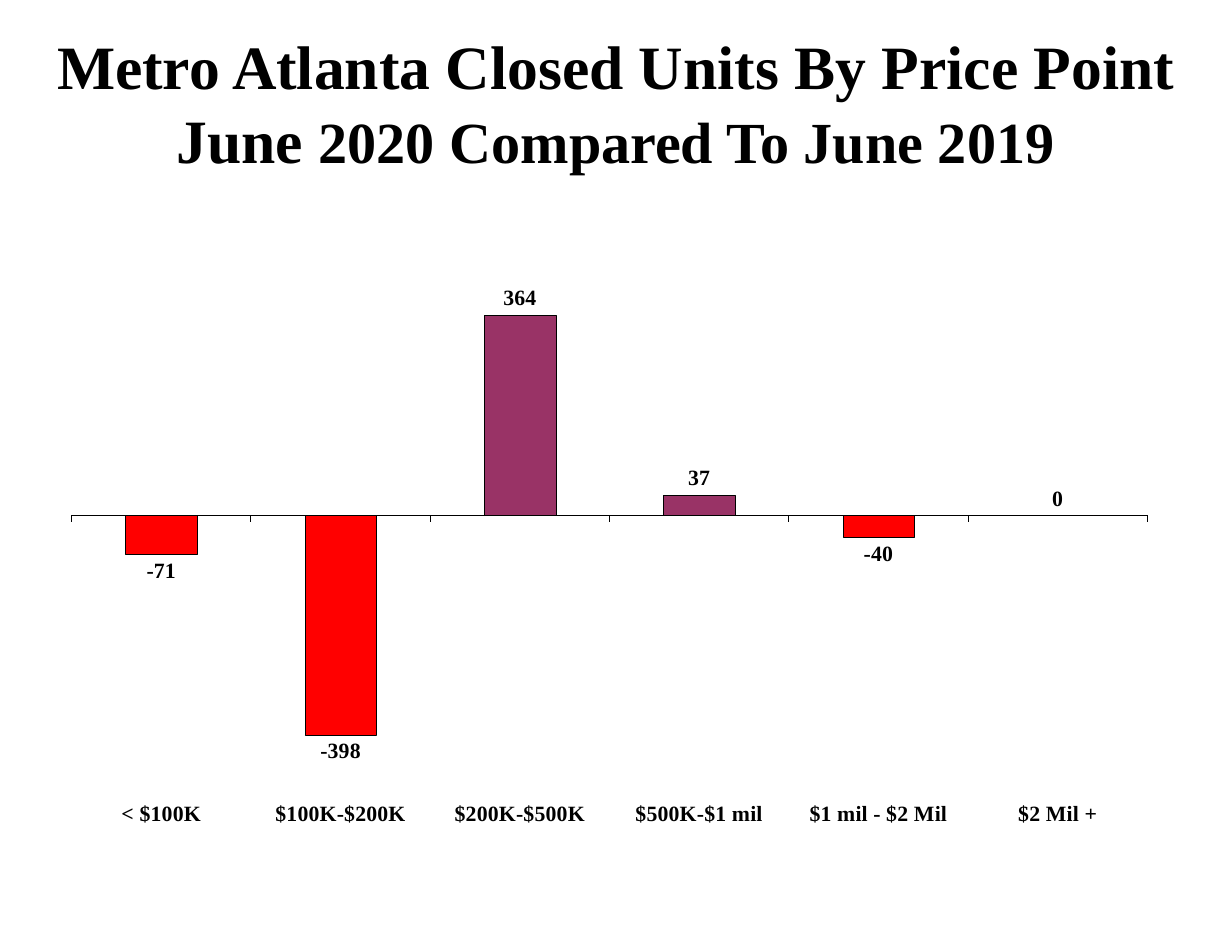
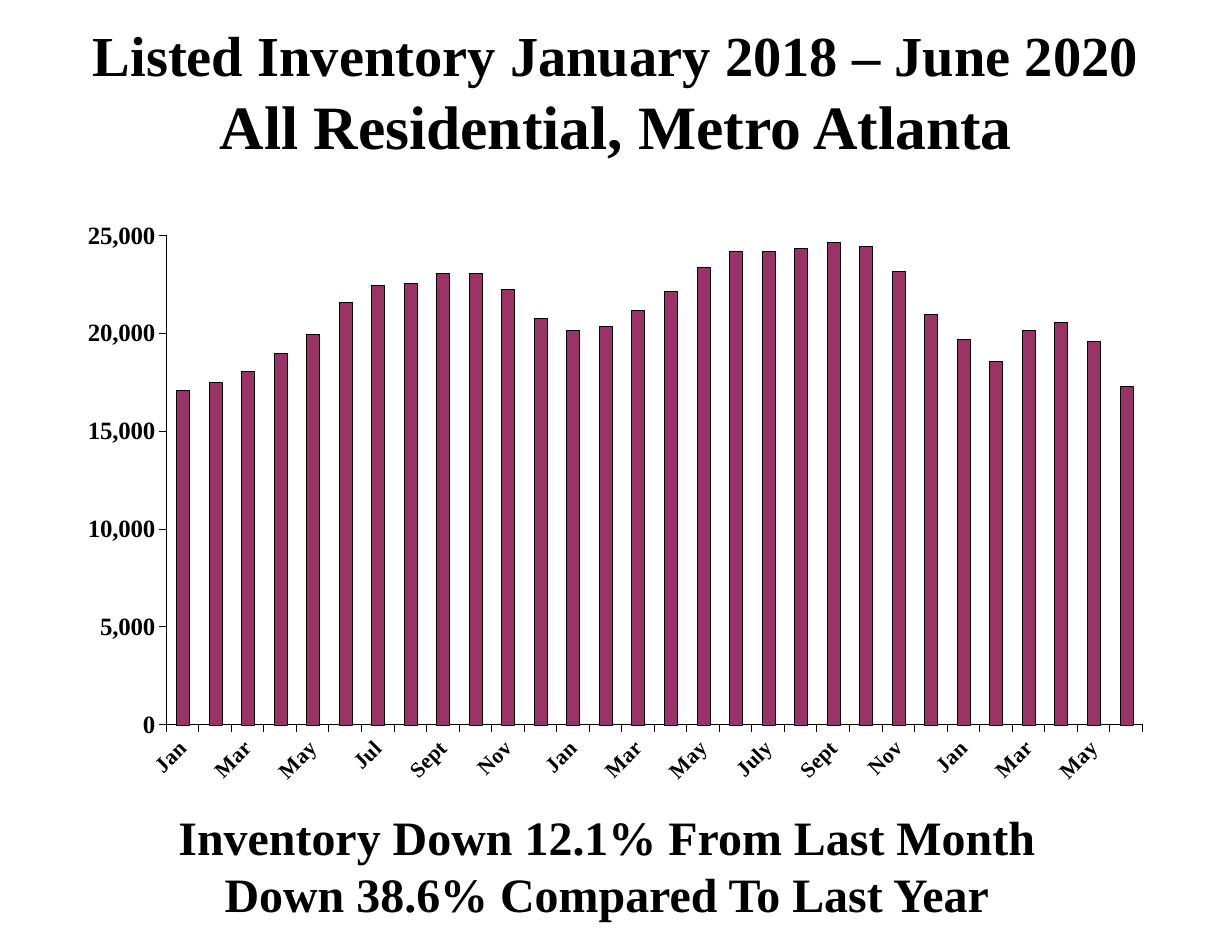
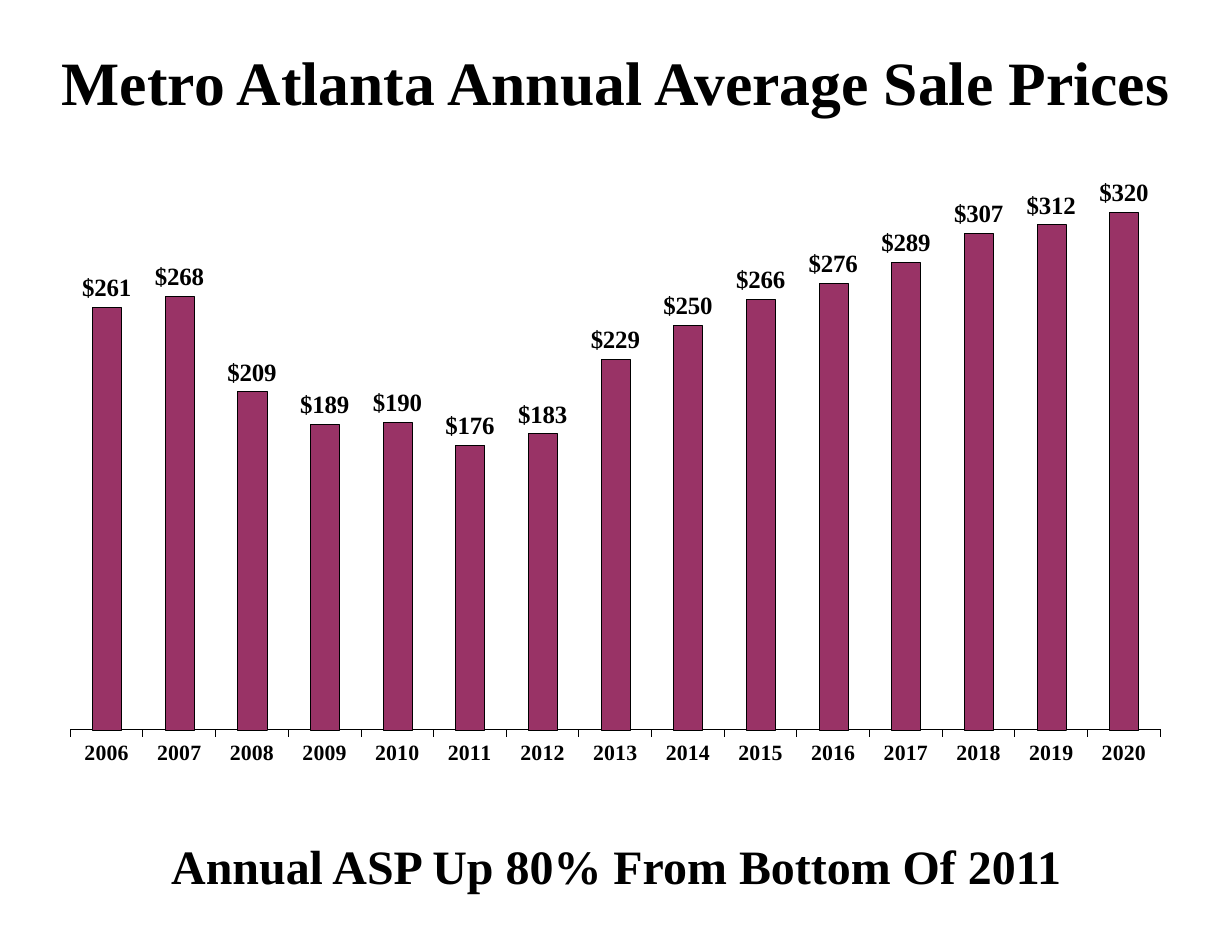
"""Build three slides of Metro Atlanta housing charts."""
from pptx import Presentation
from pptx.chart.data import CategoryChartData
from pptx.dml.color import RGBColor
from pptx.enum import chart as ch, text as tx
from pptx.oxml import parse_xml
from pptx.oxml.ns import nsdecls, qn
from pptx.util import Inches, Pt

FONT = "Times New Roman"
BLACK = RGBColor(0x00, 0x00, 0x00)
WHITE = RGBColor(0xFF, 0xFF, 0xFF)
PLUM = RGBColor(0x99, 0x33, 0x66)
RED = RGBColor(0xFF, 0x00, 0x00)
TITLE, CAPTION = 39.6, 30.8

MONTHS = ["Jan", "Feb", "Mar", "Apr", "May", "Jun", "Jul", "Aug", "Sept", "Oct", "Nov", "Dec"]
LATER_MONTHS = MONTHS[:5] + ["June", "July"] + MONTHS[7:]

SLIDES = [
    dict(
        texts=[((0, 0.68, 11, 0.46), [
            [("Metro Atlanta Closed Units By Price Point", TITLE)],
            [("June ", TITLE), ("2020 Compared To June 2019", 37.4)]])],
        chart=dict(
            box=(0.64, 0.68, 10.94, 6.9), plot=(0, 0.212, 0.878, 0.713),
            categories=["< $100K", "$100K-$200K", "$200K-$500K", "$500K-$1 mil",
                        "$1 mil - $2 Mil", "$2 Mil +"],
            values=[-71, -398, 364, 37, -40, 0],
            scale=(-500, 500, 100), color=RED, highlights={2: PLUM, 3: PLUM},
            label_format="0", label_size=14),
    ),
    dict(
        texts=[
            ((0, 7.17, 10.84, 1.1), [
                [("Inventory Down 12.1% From Last Month", CAPTION)],
                [("Down 38.6% Compared To Last Year", CAPTION)]]),
            ((0, 0.22, 11, 1.19), [
                [("Listed Inventory January 2018 – June 2020", 36.3)],
                [("All Residential, Metro Atlanta", TITLE)]])],
        chart=dict(
            box=(0.42, 1.57, 9.95, 6.09), plot=(0.107, 0.088, 0.876, 0.717),
            categories=MONTHS + LATER_MONTHS + LATER_MONTHS[:6],
            values=[17100, 17500, 18100, 19000, 20000, 21600, 22500, 22600, 23100, 23100,
                    22300, 20800, 20200, 20400, 21200, 22200, 23400, 24200, 24200, 24400,
                    24700, 24500, 23200, 21000, 19700, 18600, 20200, 20600, 19600, 17300],
            scale=(0, 25000, 5000), axis_format="#,##0", label_skip=2),
    ),
    dict(
        texts=[
            ((0.28, 7.41, 10.45, 0.64), [[("Annual ASP Up 80% From Bottom Of 2011", CAPTION)]]),
            ((0, 0.49, 11, 0.46), [[("Metro Atlanta Annual Average Sale Prices", TITLE)]])],
        chart=dict(
            box=(0.55, 0.9, 9.81, 6.39), plot=(0.008, 0.087, 0.992, 0.792),
            categories=[str(year) for year in range(2006, 2021)],
            values=[261, 268, 209, 189, 190, 176, 183, 229, 250, 266, 276, 289, 307, 312, 320],
            scale=(0, 350, 50), label_format="\\$#,##0", label_size=16),
    ),
]


def style_font(font, size):
    font.name, font.size, font.bold = FONT, Pt(size), True
    font.color.rgb = BLACK


def style_line(line, width):
    line.color.rgb = BLACK
    line.width = Pt(width)


def add_text(slide, box, lines, align=tx.PP_ALIGN.CENTER, anchor=tx.MSO_ANCHOR.MIDDLE):
    frame = slide.shapes.add_textbox(*map(Inches, box)).text_frame
    frame.word_wrap = True
    frame.vertical_anchor = anchor
    for index, runs in enumerate(lines):
        paragraph = frame.add_paragraph() if index else frame.paragraphs[0]
        paragraph.alignment = align
        for words, size in runs:
            run = paragraph.add_run()
            run.text = words
            style_font(run.font, size)


def place_plot(chart, plot):
    area = chart._chartSpace.find(".//" + qn("c:plotArea"))
    for layout in area.findall(qn("c:layout")):
        area.remove(layout)
    modes = '<c:layoutTarget val="inner"/><c:xMode val="edge"/><c:yMode val="edge"/>'
    sides = "".join(f'<c:{side} val="{share}"/>' for side, share in zip("xywh", plot))
    area.insert(0, parse_xml(f'<c:layout {nsdecls("c")}><c:manualLayout>{modes}{sides}'
                             '</c:manualLayout></c:layout>'))


def slant_and_skip(chart, skip):
    axis = chart._chartSpace.find(".//" + qn("c:catAx"))
    axis.find(qn("c:txPr")).find(qn("a:bodyPr")).set("rot", "-2700000")
    axis.find(qn("c:noMultiLvlLbl")).addprevious(
        parse_xml(f'<c:tickLblSkip {nsdecls("c")} val="{skip}"/>'))


def add_columns(slide, box, plot, categories, values, scale, color=PLUM, highlights=None,
                label_format=None, label_size=14, axis_format=None, label_skip=None):
    data = CategoryChartData()
    data.categories = categories
    data.add_series("Series 1", values)
    chart = slide.shapes.add_chart(
        ch.XL_CHART_TYPE.COLUMN_CLUSTERED, *map(Inches, box), data).chart
    chart.has_title = chart.has_legend = False
    style_font(chart.font, 14)
    place_plot(chart, plot)

    columns = chart.plots[0]
    columns.gap_width = 150
    columns.vary_by_categories = False
    series = columns.series[0]
    series.invert_if_negative = False
    highlights = highlights or {}
    formats = [(series.format, color)]
    formats += [(series.points[i].format, tint) for i, tint in highlights.items()]
    for bar, tint in formats:
        bar.fill.solid()
        bar.fill.fore_color.rgb = tint
        style_line(bar.line, 0.06)

    category_axis, value_axis = chart.category_axis, chart.value_axis
    value_axis.has_major_gridlines = False
    value_axis.minimum_scale, value_axis.maximum_scale, value_axis.major_unit = scale
    value_axis.visible = axis_format is not None
    category_axis.tick_label_position = ch.XL_TICK_LABEL_POSITION.LOW
    for axis, size in ((category_axis, 14), (value_axis, 16)):
        axis.major_tick_mark = ch.XL_TICK_MARK.OUTSIDE
        axis.minor_tick_mark = ch.XL_TICK_MARK.NONE
        style_font(axis.tick_labels.font, size)
        style_line(axis.format.line, 0.01)
    if axis_format:
        value_axis.tick_labels.number_format = axis_format
        value_axis.tick_labels.number_format_is_linked = False
    if label_skip:
        slant_and_skip(chart, label_skip)
    if label_format:
        columns.has_data_labels = True
        labels = columns.data_labels
        labels.show_value = True
        labels.number_format = label_format
        labels.number_format_is_linked = False
        labels.position = ch.XL_LABEL_POSITION.OUTSIDE_END
        style_font(labels.font, label_size)


def main():
    deck = Presentation()
    deck.slide_width, deck.slide_height = Inches(11), Inches(8.5)
    for content in SLIDES:
        slide = deck.slides.add_slide(deck.slide_layouts[6])
        slide.background.fill.solid()
        slide.background.fill.fore_color.rgb = WHITE
        add_columns(slide, **content["chart"])
        for box, lines in content["texts"]:
            add_text(slide, box, lines)
    deck.save("out.pptx")


if __name__ == "__main__":
    main()
